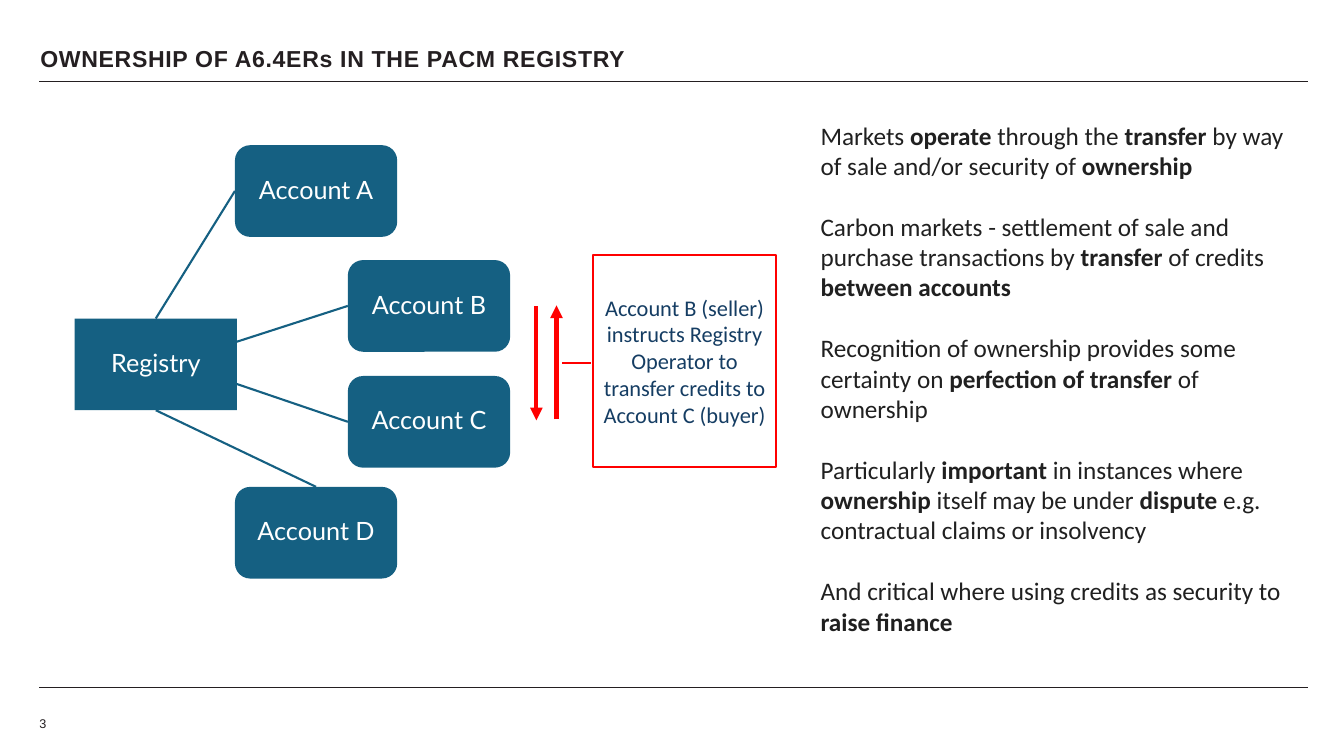
import pptx
import pptx.util
from pptx.dml.color import RGBColor
from pptx.enum.shapes import MSO_CONNECTOR, MSO_SHAPE
from pptx.enum.text import MSO_ANCHOR, PP_ALIGN
from pptx.oxml.ns import qn
from lxml import etree

PX = 9144  # 100 px to the inch
INK = RGBColor(0x24, 0x1F, 0x21)
BODY = RGBColor(0x20, 0x20, 0x20)
TEAL = RGBColor(0x15, 0x60, 0x82)
NAVY = RGBColor(0x15, 0x3D, 0x63)
RED = RGBColor(0xFF, 0x00, 0x00)
WHITE = RGBColor(0xFF, 0xFF, 0xFF)

TOP, LEFT, BOTTOM = 0, 1, 2
NODE_WIDTH, NODE_HEIGHT = 161, 91

presentation = pptx.Presentation()
presentation.slide_width = 1333 * PX
presentation.slide_height = 750 * PX
slide = presentation.slides.add_slide(presentation.slide_layouts[5])


def style_run(run, name, size, color, bold=False):
    run.font.name = name
    run.font.size = pptx.util.Pt(size)
    run.font.color.rgb = color
    run.font.bold = bold


def add_line(x1, y1, x2, y2, color, width, arrow=False):
    line = slide.shapes.add_connector(
        MSO_CONNECTOR.STRAIGHT, x1 * PX, y1 * PX, x2 * PX, y2 * PX)
    line.line.color.rgb = color
    line.line.width = pptx.util.Pt(width)
    if arrow:
        etree.SubElement(line.line._get_or_add_ln(), qn("a:tailEnd"), type="triangle")
    etree.SubElement(line._element.spPr, qn("a:effectLst"))
    return line


# Header and footer
for rule_y in (81, 682):
    add_line(39, rule_y, 1297, rule_y, INK, 1)

title = slide.shapes.title
title.left, title.top, title.width, title.height = 30 * PX, 47 * PX, 1150 * PX, 30 * PX
title.text_frame.text = "OWNERSHIP OF A6.4ERs IN THE PACM REGISTRY"
title.text_frame.vertical_anchor = MSO_ANCHOR.TOP
paragraph = title.text_frame.paragraphs[0]
paragraph.alignment = PP_ALIGN.LEFT
paragraph.line_spacing = 0.7
style_run(paragraph.runs[0], "Arial", 16.5, INK, bold=True)
paragraph.runs[0]._r.get_or_add_rPr().set("spc", "50")

page_number = slide.shapes.add_textbox(39 * PX, 708 * PX, 39 * PX, 20 * PX)
frame = page_number.text_frame
frame.margin_left = frame.margin_right = frame.margin_top = frame.margin_bottom = 0
frame.vertical_anchor = MSO_ANCHOR.MIDDLE
frame.text = "3"
style_run(frame.paragraphs[0].runs[0], "Arial", 9, INK)

# Explanation: odd pieces of each paragraph are bold
EXPLANATION = [
    ("Markets ", "operate ", "through the ", "transfer ",
     "by way of sale and/or security of ", "ownership"),
    ("Carbon markets - settlement of sale and purchase transactions by ",
     "transfer ", "of credits ", "between accounts"),
    ("Recognition of ownership provides some certainty on ",
     "perfection of transfer", " of ownership"),
    ("Particularly ", "important ", "in instances where ", "ownership ",
     "itself may be under ", "dispute ", "e.g. contractual claims or insolvency"),
    ("And critical where using credits as security to ", "raise finance"),
]
explanation = slide.shapes.add_textbox(804 * PX, 114 * PX, 491 * PX, 525 * PX)
frame = explanation.text_frame
frame.word_wrap = True
for index, pieces in enumerate(EXPLANATION):
    paragraph = frame.add_paragraph() if index else frame.paragraphs[0]
    if index:
        paragraph.space_before = pptx.util.Pt(22)
    for position, piece in enumerate(pieces):
        run = paragraph.add_run()
        run.text = piece
        style_run(run, "Calibri", 18, BODY, bold=position % 2 == 1)

# Registry and its accounts
NODES = [
    ("Registry", MSO_SHAPE.RECTANGLE, 74, 316),
    ("Account A", MSO_SHAPE.ROUNDED_RECTANGLE, 233, 144),
    ("Account B", MSO_SHAPE.ROUNDED_RECTANGLE, 345, 258),
    ("Account C", MSO_SHAPE.ROUNDED_RECTANGLE, 345, 373),
    ("Account D", MSO_SHAPE.ROUNDED_RECTANGLE, 233, 483),
]
nodes = {}
for label, preset, x, y in NODES:
    node = slide.shapes.add_shape(
        preset, x * PX, y * PX, NODE_WIDTH * PX, NODE_HEIGHT * PX)
    node.shadow.inherit = False
    node.fill.solid()
    node.fill.fore_color.rgb = TEAL
    node.line.fill.background()
    frame = node.text_frame
    frame.margin_left = frame.margin_right = frame.margin_top = frame.margin_bottom = PX
    frame.word_wrap = True
    frame.vertical_anchor = MSO_ANCHOR.MIDDLE
    frame.text = label
    paragraph = frame.paragraphs[0]
    paragraph.alignment = PP_ALIGN.CENTER
    paragraph.line_spacing = 0.9
    style_run(paragraph.runs[0], "Lato", 18, WHITE)
    nodes[label] = node

# Account side, registry side (None where the link ends off the middle), end point
LINKS = [
    ("Account A", LEFT, TOP, 154, 316),
    ("Account B", LEFT, None, 235, 339),
    ("Account C", LEFT, None, 235, 381),
    ("Account D", TOP, BOTTOM, 154, 407),
]
for label, account_side, registry_side, end_x, end_y in LINKS:
    link = add_line(end_x, end_y, end_x, end_y, TEAL, 1.5)
    link.begin_connect(nodes[label], account_side)
    if registry_side is not None:
        link.end_connect(nodes["Registry"], registry_side)

# Transfer between accounts B and C
add_line(532, 304, 532, 417, RED, 3, arrow=True)
add_line(552, 416, 552, 303, RED, 3, arrow=True)

callout = slide.shapes.add_shape(
    MSO_SHAPE.LINE_CALLOUT_1, 588 * PX, 253 * PX, 182 * PX, 210 * PX)
for index, value in enumerate((0.51, -0.01, 0.51, -0.17)):
    callout.adjustments[index] = value
callout.shadow.inherit = False
callout.fill.solid()
callout.fill.fore_color.rgb = WHITE
callout.line.color.rgb = RED
callout.line.width = pptx.util.Pt(1.5)
frame = callout.text_frame
frame.word_wrap = True
frame.vertical_anchor = MSO_ANCHOR.MIDDLE
frame.text = ("Account B (seller) instructs Registry Operator to "
              "transfer credits to Account C (buyer)")
frame.paragraphs[0].alignment = PP_ALIGN.CENTER
style_run(frame.paragraphs[0].runs[0], "Calibri", 16, NAVY)

presentation.save("out.pptx")
